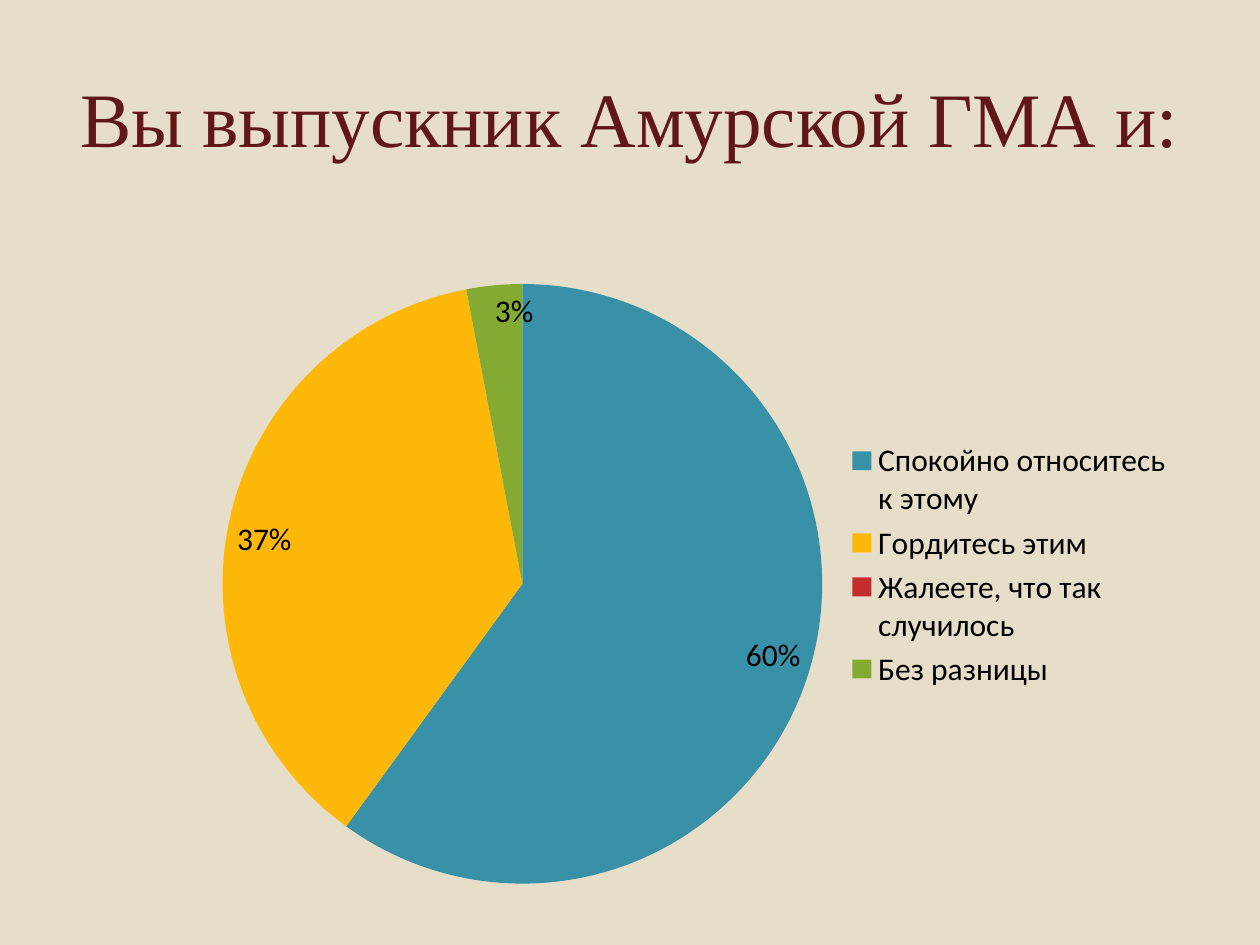
"""Build a slide with a titled pie chart of graduates' answers."""
from lxml import etree
from pptx import Presentation
from pptx import util as u
from pptx.chart.data import CategoryChartData
from pptx.dml.color import RGBColor
from pptx.enum import chart as ch, text
from pptx.oxml import parse_xml
from pptx.oxml.ns import nsdecls, qn

PX = 914400 // 126
THEME = {
    "back": "E7DEC9", "title": "621717", "ink": "000000",
    "slices": ["3891A7", "FEB80A", "C32D2E", "84AA33"],
    "head": "Times New Roman", "body": "Calibri",
    "big": 44, "small": 18,
}


def style(font, name, size, color):
    font.name, font.size = name, u.Pt(size)
    font.color.rgb = RGBColor.from_string(color)


def place(node, after, inner, box):
    for old in node.findall(qn("c:layout")):
        node.remove(old)
    lay = parse_xml(f"<c:layout {nsdecls('c')}><c:manualLayout/></c:layout>")
    rows = [("layoutTarget", "inner")] if inner else []
    rows += [("xMode", "edge"), ("yMode", "edge"), *zip("xywh", box)]
    for tag, val in rows:
        etree.SubElement(lay[0], qn(f"c:{tag}")).set("val", str(val))
    if after is None:
        node.insert(0, lay)
    else:
        after.addnext(lay)


deck = Presentation()
deck.slide_width, deck.slide_height = 1260 * PX, 945 * PX
slide = deck.slides.add_slide(deck.slide_layouts[6])
fill = slide.background.fill
fill.solid()
fill.fore_color.rgb = RGBColor.from_string(THEME["back"])

title = slide.shapes.add_textbox(63 * PX, 38 * PX, 1134 * PX, 157 * PX)
frame = title.text_frame
frame.word_wrap = True
frame.vertical_anchor = text.MSO_ANCHOR.MIDDLE
para = frame.paragraphs[0]
para.alignment = text.PP_ALIGN.CENTER
run = para.add_run()
run.text = "Вы выпускник Амурской ГМА и:"
style(run.font, THEME["head"], THEME["big"], THEME["title"])

data = CategoryChartData()
data.categories = ["Спокойно относитесь к этому", "Гордитесь этим",
                   "Жалеете, что так случилось", "Без разницы"]
data.add_series("Series 1", [60, 37, 0, 3])
chart = slide.shapes.add_chart(
    ch.XL_CHART_TYPE.PIE, 203 * PX, 185 * PX, 983 * PX, 760 * PX, data).chart
style(chart.font, THEME["body"], THEME["small"], THEME["ink"])
chart.has_title = False
chart.has_legend = True
legend = chart.legend
legend.position = ch.XL_LEGEND_POSITION.RIGHT
legend.include_in_layout = False

pie = chart.plots[0]
pie.vary_by_categories = True
series = pie.series[0]
for i, color in enumerate(THEME["slices"]):
    slice_fill = series.points[i].format.fill
    slice_fill.solid()
    slice_fill.fore_color.rgb = RGBColor.from_string(color)

labels = series.data_labels
labels.show_percentage = True
labels.show_value = False
labels.number_format = "0%"
labels.number_format_is_linked = False
labels.position = ch.XL_LABEL_POSITION.INSIDE_END
empty = parse_xml(f'<c:dLbl {nsdecls("c")}><c:idx val="2"/><c:delete val="1"/></c:dLbl>')
series.format.line.fill.background()
series._element.find(qn("c:dLbls")).insert(0, empty)

area = chart._chartSpace.chart.plotArea
place(area, None, True, (0.02, 0.13, 0.61, 0.79))
key = legend._element
place(key, key.find(qn("c:legendPos")), False, (0.65, 0.33, 0.34, 0.34))

deck.save("out.pptx")
